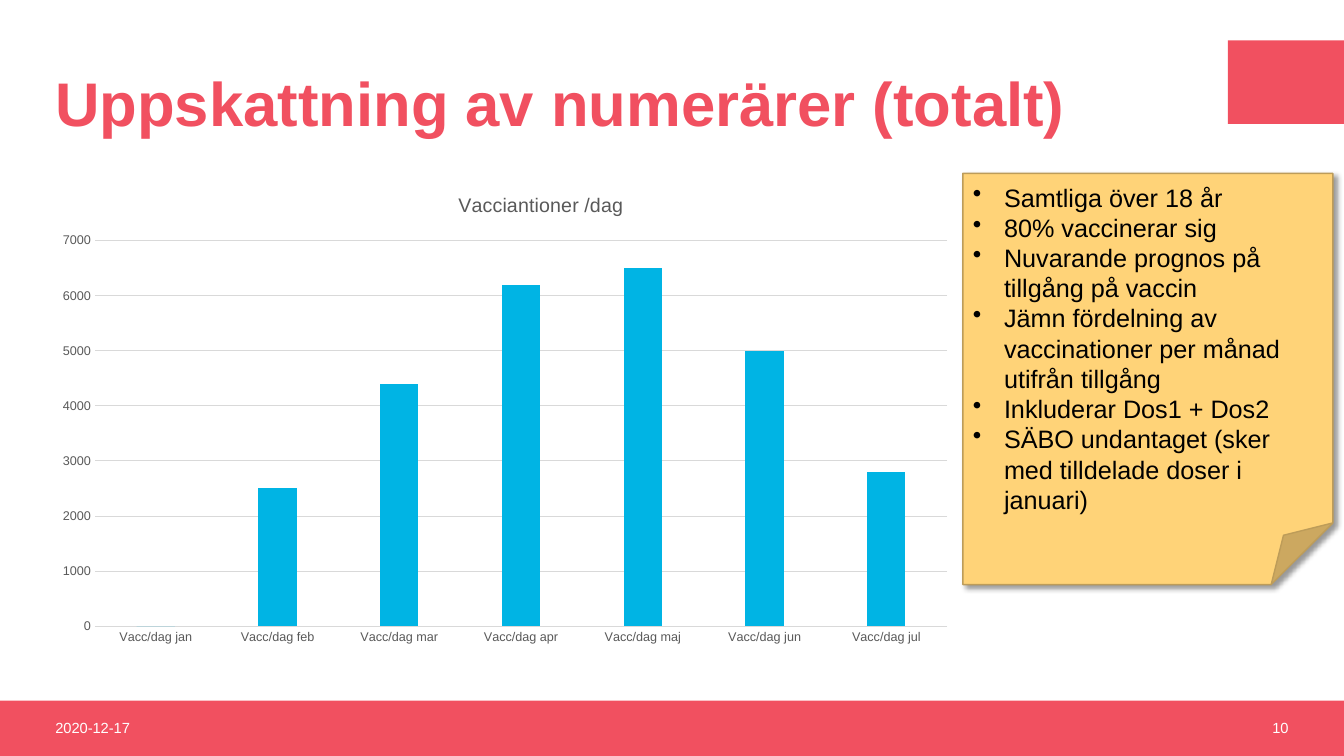
from lxml import etree
from pptx import Presentation
from pptx.chart.data import CategoryChartData
from pptx.dml.color import RGBColor
from pptx.enum.chart import XL_CHART_TYPE, XL_TICK_MARK
from pptx.enum.shapes import MSO_SHAPE
from pptx.enum.text import MSO_ANCHOR, PP_ALIGN
from pptx.oxml import parse_xml
from pptx.oxml.ns import nsdecls, qn
from pptx.util import Inches, Pt

RECT, NOTE = MSO_SHAPE.RECTANGLE, MSO_SHAPE.FOLDED_CORNER
COLUMN, NO_TICK = XL_CHART_TYPE.COLUMN_CLUSTERED, XL_TICK_MARK.NONE
LEFT, RIGHT, MIDDLE = PP_ALIGN.LEFT, PP_ALIGN.RIGHT, MSO_ANCHOR.MIDDLE

CORAL, WHITE, BLACK = "F15060", "FFFFFF", "000000"
SAND, EDGE, BLUE = "FFD378", "BD9C59", "00B4E4"
GREY, PALE = "595959", "D9D9D9"

MARGIN, FOOT, TOP = 3.38, 92.67, 22.93
MONTHS = ["jan", "feb", "mar", "apr", "maj", "jun", "jul"]
DOSES = [0, 2500, 4400, 6200, 6500, 5000, 2800]
POINTS = [
    "Samtliga över 18 år",
    "80% vaccinerar sig",
    "Nuvarande prognos på tillgång på vaccin",
    "Jämn fördelning av vaccinationer per månad utifrån tillgång",
    "Inkluderar Dos1 + Dos2",
    "SÄBO undantaget (sker med tilldelade doser i januari)",
]


def color(code):
    return RGBColor.from_string(code)


def apply(item, values):
    for name, value in values.items():
        setattr(item, name, value)


class Deck:
    """Draws on one slide; every box is left, top, width, height in percent."""

    face = "Arial"

    def __init__(self):
        self.prs = Presentation()
        apply(self.prs, {"slide_width": Inches(13.33), "slide_height": Inches(7.5)})
        self.slide = self.prs.slides.add_slide(self.prs.slide_layouts[6])

    def place(self, box):
        sides = (self.prs.slide_width, self.prs.slide_height) * 2
        return [round(part * side / 100) for part, side in zip(box, sides)]

    def style(self, font, size, code, bold=False):
        apply(font, {"name": self.face, "size": Pt(size), "bold": bold})
        font.color.rgb = color(code)

    def stroke(self, line, code, width):
        line.color.rgb = color(code)
        line.width = Pt(width)

    def fill_in(self, shape, lines, size, code, bold=False, align=LEFT,
                space=None, bullet=False):
        """Sets the lines of text in a shape."""
        frame = shape.text_frame
        apply(frame, {"word_wrap": True, "vertical_anchor": MIDDLE})
        for index, text in enumerate(lines):
            para = frame.add_paragraph() if index else frame.paragraphs[0]
            para.text = text
            apply(para, {"alignment": align, "line_spacing": space})
            if bullet:
                props = para._p.get_or_add_pPr()
                props.set("marL", str(Inches(0.31)))
                props.set("indent", str(Inches(-0.31)))
                etree.SubElement(props, qn("a:buChar")).set("char", "•")
            self.style(para.runs[0].font, size, code, bold)

    def text(self, box, words, size, code, **form):
        shape = self.slide.shapes.add_textbox(*self.place(box))
        self.fill_in(shape, [words], size, code, **form)

    def block(self, kind, box, fill):
        shape = self.slide.shapes.add_shape(kind, *self.place(box))
        shape.shadow.inherit = False
        shape.fill.solid()
        shape.fill.fore_color.rgb = color(fill)
        shape.line.fill.background()
        return shape

    def note(self, box, lines):
        shape = self.block(NOTE, box, SAND)
        self.stroke(shape.line, EDGE, 1)
        glow = shape._element.spPr.find(qn("a:effectLst"))
        glow.append(parse_xml(
            f'<a:outerShdw {nsdecls("a")} blurRad="{Pt(4)}" dist="{Pt(3)}" '
            f'dir="2700000" algn="tl" rotWithShape="0"><a:srgbClr val="{BLACK}">'
            '<a:alpha val="40000"/></a:srgbClr></a:outerShdw>'))
        self.fill_in(shape, lines, 18, BLACK, bullet=True)

    def chart(self, box, title, cats, name, values):
        data = CategoryChartData(number_format="0")
        data.categories = cats
        data.add_series(name, values)
        chart = self.slide.shapes.add_chart(COLUMN, *self.place(box), data).chart
        self.style(chart.font, 10, BLACK)
        apply(chart, {"has_legend": False, "has_title": True})
        head = chart.chart_title.text_frame
        head.text = title
        self.style(head.paragraphs[0].runs[0].font, 14, GREY)

        plot = chart.plots[0]
        apply(plot, {"gap_width": 219, "overlap": -27, "vary_by_categories": False})
        bars = plot.series[0].format.fill
        bars.solid()
        bars.fore_color.rgb = color(BLUE)

        for axis in (chart.category_axis, chart.value_axis):
            apply(axis, {"major_tick_mark": NO_TICK, "minor_tick_mark": NO_TICK})
            self.style(axis.tick_labels.font, 9, GREY)
        self.stroke(chart.category_axis.format.line, PALE, 0.75)
        scale = chart.value_axis
        apply(scale, {"minimum_scale": 0, "maximum_scale": 7000, "major_unit": 1000})
        apply(scale.tick_labels, {"number_format": "0", "number_format_is_linked": False})
        scale.format.line.fill.background()
        self.stroke(scale.major_gridlines.format.line, PALE, 0.75)
        self.fit(chart, {"x": 0.05, "y": 0.14, "w": 0.86, "h": 0.8})

    def fit(self, chart, shares):
        """Fixes the inner plot area as shares of the chart."""
        area = chart._chartSpace.find(".//" + qn("c:plotArea"))
        for old in area.findall(qn("c:layout")):
            area.remove(old)
        modes = '<c:xMode val="edge"/><c:yMode val="edge"/>'
        sizes = "".join(f'<c:{key} val="{part}"/>' for key, part in shares.items())
        area.insert(0, parse_xml(
            f'<c:layout {nsdecls("c")}><c:manualLayout><c:layoutTarget val="inner"/>'
            f'{modes}{sizes}</c:manualLayout></c:layout>'))


def main():
    deck = Deck()
    deck.block(RECT, (0, FOOT, 100, 100 - FOOT), CORAL)
    deck.block(RECT, (91.37, 5.33, 8.63, 11.07), CORAL)
    deck.text((MARGIN, 5.33, 87.1, 17.6), "Uppskattning av numerärer (totalt)",
              44, CORAL, bold=True, space=0.9)
    for left, words, align in ((MARGIN, "2020-12-17", LEFT), (74.12, "10", RIGHT)):
        deck.text((left, FOOT, 22.5, 7.2), words, 10.5, WHITE, align=align)
    deck.chart((MARGIN, TOP, 73.74, 63.73), "Vacciantioner /dag",
               [f"Vacc/dag {month}" for month in MONTHS], "Summa", DOSES)
    deck.note((71.64, TOP, 27.53, 54.4), POINTS)
    deck.prs.save("out.pptx")


if __name__ == "__main__":
    main()
